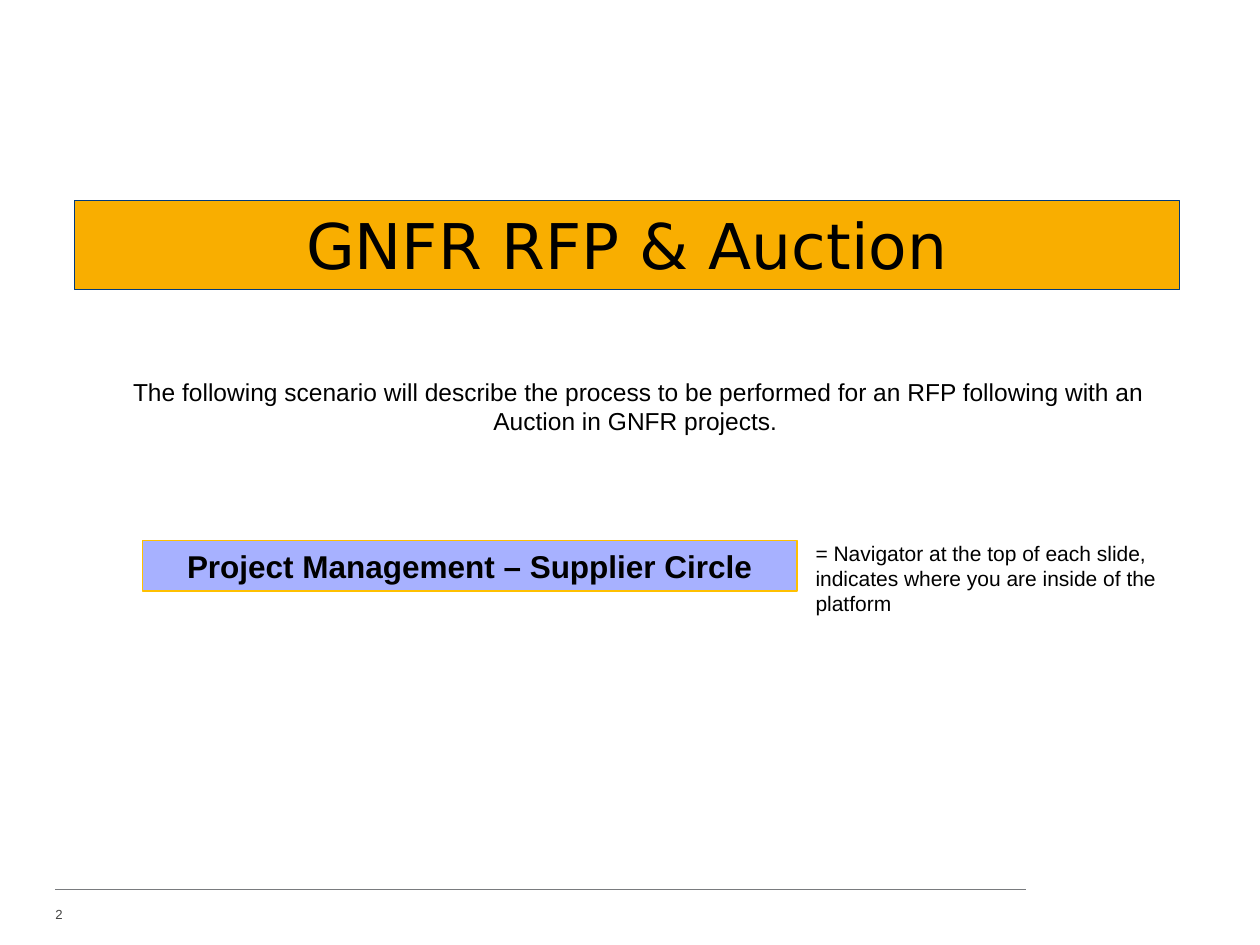
from lxml import etree
from pptx import Presentation
from pptx import util as u
from pptx.dml.color import RGBColor
from pptx.enum import shapes, text
from pptx.oxml import ns

BLACK = RGBColor(0x00, 0x00, 0x00)
DARK_GREY = RGBColor(0x43, 0x43, 0x42)
RULE_GREY = RGBColor(0x79, 0x7B, 0x7E)
ORANGE = RGBColor(0xF9, 0xAE, 0x00)
NAVY = RGBColor(0x00, 0x3B, 0x7E)
LAVENDER = RGBColor(0xA7, 0xB1, 0xFF)
GOLD = RGBColor(0xFF, 0xC0, 0x00)

CENTER = text.PP_ALIGN.CENTER
LEFT = text.PP_ALIGN.LEFT


def inches(box):
    return [u.Inches(length) for length in box]


def write(shape, words, size, align=LEFT, color=BLACK, font="Arial",
          bold=False, inset=True):
    frame = shape.text_frame
    frame.word_wrap = True
    frame.vertical_anchor = text.MSO_ANCHOR.TOP
    if not inset:
        frame.margin_left = frame.margin_right = 0
        frame.margin_top = frame.margin_bottom = 0
    paragraph = frame.paragraphs[0]
    paragraph.alignment = align
    run = paragraph.add_run()
    run.text = words
    run.font.size = u.Pt(size)
    run.font.name = font
    run.font.bold = bold
    run.font.color.rgb = color


def add_label(slide, box, words, size, **style):
    write(slide.shapes.add_textbox(*inches(box)), words, size, **style)


def add_banner(slide, box, fill, line, words, size, **style):
    shape = slide.shapes.add_shape(shapes.MSO_SHAPE.RECTANGLE, *inches(box))
    shape.shadow.inherit = False
    shape.fill.solid()
    shape.fill.fore_color.rgb = fill
    shape.line.color.rgb = line
    shape.line.width = u.Pt(0.75)
    write(shape, words, size, align=CENTER, **style)


def add_navigator(slide, box):
    """Sample navigator bar on the left, its explanation on the right."""
    left, top, width, height = box
    bar_width = 0.64 * width
    note_left = 0.658 * width
    add_banner(slide, (left, top, bar_width, 0.77 * height), LAVENDER, GOLD,
               "Project Management – Supplier Circle", 18, bold=True)
    add_label(slide, (left + note_left, top, width - note_left, height),
              "= Navigator at the top of each slide, indicates where you are "
              "inside of the platform", 12, inset=False)


def add_footer(slide, box):
    """Thin rule with the slide number below it."""
    left, top, width, height = box
    rule = slide.shapes.add_connector(
        shapes.MSO_CONNECTOR.STRAIGHT, *inches((left, top, left + width, top)))
    rule.line.color.rgb = RULE_GREY
    rule.line.width = u.Pt(0.5)
    etree.SubElement(rule._element.spPr, ns.qn("a:effectLst"))
    add_label(slide, (left, top + 0.35 * height, 0.17, 0.65 * height), "2", 7.5,
              color=DARK_GREY, inset=False)


def main():
    presentation = Presentation()
    presentation.slide_width = u.Inches(10)
    presentation.slide_height = u.Inches(7.5)
    slide = presentation.slides.add_slide(presentation.slide_layouts[6])

    add_footer(slide, (0.44, 7.06, 7.7, 0.37))
    add_label(slide, (0.79, 2.94, 8.56, 0.57),
              "The following scenario will describe the process to be performed "
              "for an RFP following with an Auction in GNFR projects. ",
              14, align=CENTER)
    add_navigator(slide, (1.13, 4.29, 8.12, 0.52))
    add_banner(slide, (0.59, 1.59, 8.77, 0.71), ORANGE, NAVY,
               "GNFR RFP & Auction", 36, font="DejaVu Sans")

    presentation.save("out.pptx")


if __name__ == "__main__":
    main()
